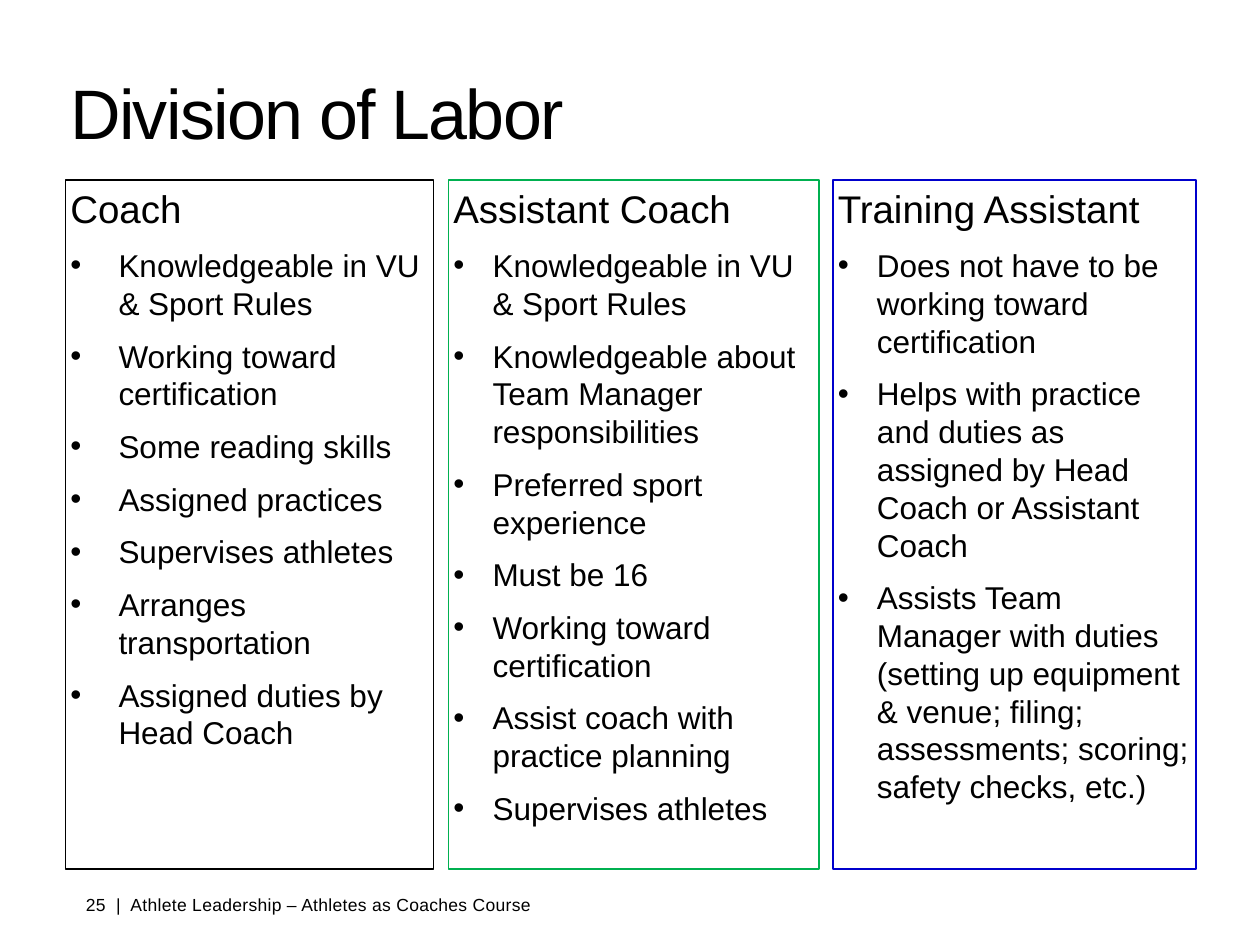
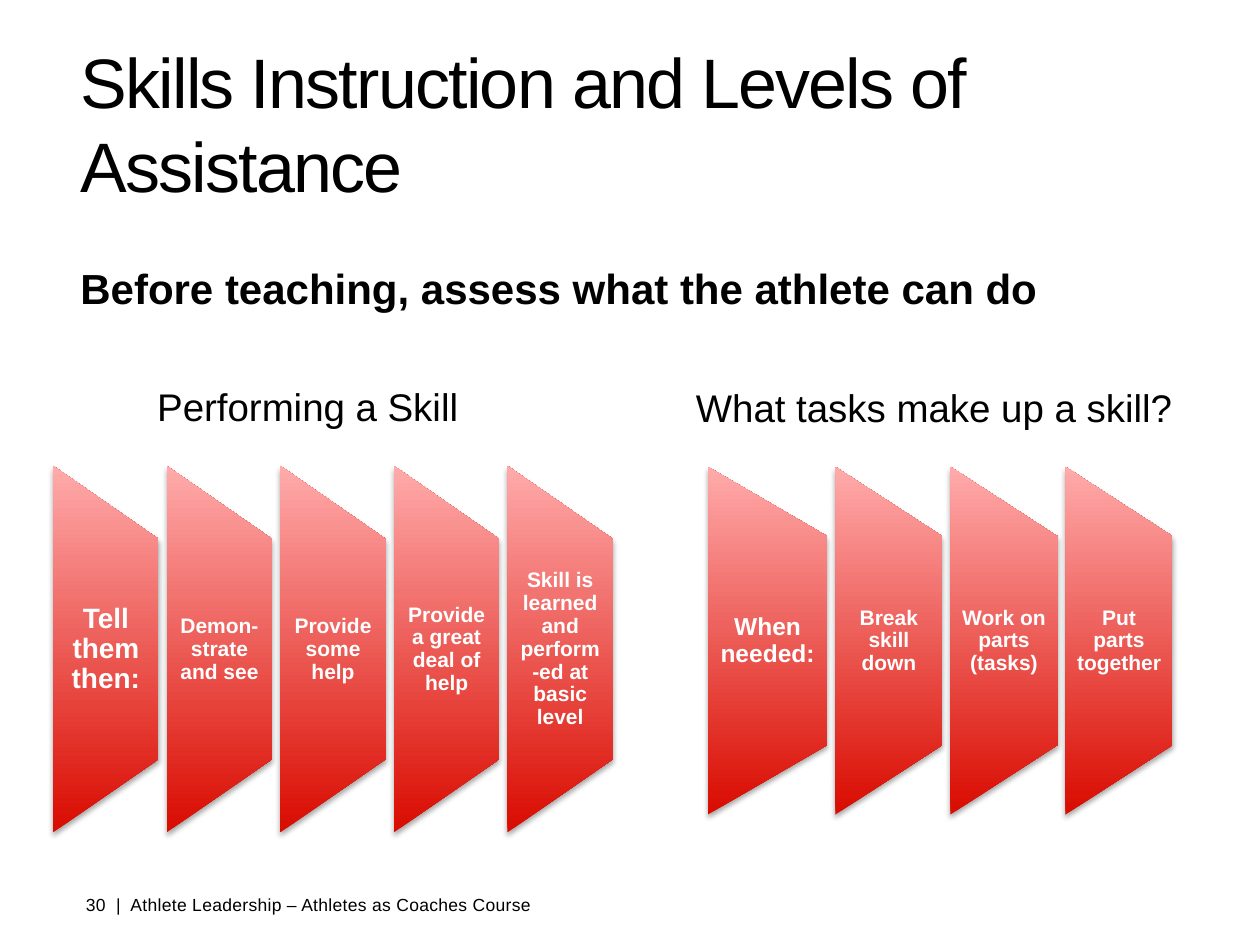
"""Build two course slides: division of labor and levels of assistance."""
from lxml import etree
from pptx import Presentation
from pptx.dml.color import RGBColor
from pptx.enum.shapes import MSO_SHAPE
from pptx.enum.text import MSO_ANCHOR, PP_ALIGN
from pptx.oxml import parse_xml
from pptx.oxml.ns import qn
from pptx.util import Cm, Pt

TOP, MIDDLE = MSO_ANCHOR.TOP, MSO_ANCHOR.MIDDLE
LEFT, CENTER = PP_ALIGN.LEFT, PP_ALIGN.CENTER
RECTANGLE, TRAPEZOID = MSO_SHAPE.RECTANGLE, MSO_SHAPE.FLOWCHART_MANUAL_OPERATION
FONT = "Arial"
COLORS = {"text": "000000", "white": "FFFFFF", "coach": "000000", "assistant": "00B050",
          "training": "0000CC", "dark_red": "D90B00", "light_red": "FFABAB"}
LINE_HEIGHT = 1.2
PANEL_GAP = 0.16
SHADOW = ('<a:outerShdw xmlns:a="http://schemas.openxmlformats.org/drawingml/2006/main" '
          'blurRad="40000" dist="23000" dir="5400000" rotWithShape="0">'
          '<a:srgbClr val="000000"><a:alpha val="35000"/></a:srgbClr></a:outerShdw>')


def style_paragraph(paragraph, size, color="text", bold=False, align=LEFT, spacing=None, tracking=0):
    paragraph.alignment = align
    paragraph.line_spacing = Pt(spacing or round(size * LINE_HEIGHT, 1))
    for run in paragraph.runs:
        run.font.name = FONT
        run.font.size = Pt(size)
        run.font.bold = bold
        run.font.color.rgb = RGBColor.from_string(COLORS[color])
        if tracking:
            run._r.get_or_add_rPr().set("spc", str(tracking))


def add_text(slide, box, text, size, anchor=TOP, inset=(0.25, 0.13), **style):
    frame = slide.shapes.add_textbox(*[Cm(length) for length in box]).text_frame
    frame.word_wrap = True
    frame.vertical_anchor = anchor
    frame.margin_left = frame.margin_right = Cm(inset[0])
    frame.margin_top = frame.margin_bottom = Cm(inset[1])
    frame.text = text
    style_paragraph(frame.paragraphs[0], size, **style)


prs = Presentation()
prs.slide_width, prs.slide_height = Cm(25.4), Cm(19.05)

slides = []
for number, title, title_left, title_spacing in [
    (25, "Division of Labor", 1.32, 36),
    (30, "Skills Instruction and Levels of Assistance", 1.52, 48),
]:
    slide = prs.slides.add_slide(prs.slide_layouts[6])
    add_text(slide, (1.55, 17.93, 10.29, 0.51),
             f"{number}  |  Athlete Leadership – Athletes as Coaches Course", 10,
             inset=(0.18, 0.1), tracking=20)
    add_text(slide, (title_left, 1.02, 21.11 - title_left, 2.9), title, 40, anchor=MIDDLE,
             inset=(0.1, 0.1), spacing=title_spacing, tracking=-100)
    slides.append(slide)
labor, skills = slides

roles = [
    ("Coach", "coach", 1.32, 7.42, 0.75, 0.97, [
        "Knowledgeable in VU & Sport Rules", "Working toward certification",
        "Some reading skills", "Assigned practices", "Supervises athletes",
        "Arranges transportation", "Assigned duties by Head Coach"]),
    ("Assistant Coach", "assistant", 9.04, 7.47, 0.75, 0.79, [
        "Knowledgeable in VU & Sport Rules",
        "Knowledgeable about Team Manager responsibilities",
        "Preferred sport experience", "Must be 16", "Working toward certification",
        "Assist coach with practice planning", "Supervises athletes"]),
    ("Training Assistant", "training", 16.79, 7.32, 1, 0.79, [
        "Does not have to be working toward certification",
        "Helps with practice and duties as assigned by Head Coach or Assistant Coach",
        "Assists Team Manager with duties (setting up equipment & venue; filing; "
        "assessments; scoring; safety checks, etc.)"]),
]
for role, border, left, width, border_width, indent, duties in roles:
    column = labor.shapes.add_shape(RECTANGLE, Cm(left), Cm(3.63), Cm(width), Cm(13.89))
    column.shadow.inherit = False
    column.fill.background()
    column.line.color.rgb = RGBColor.from_string(COLORS[border])
    column.line.width = Pt(border_width)
    frame = column.text_frame
    frame.word_wrap = True
    frame.vertical_anchor = TOP
    frame.margin_left = frame.margin_right = frame.margin_top = frame.margin_bottom = Cm(0.1)
    frame.text = role
    style_paragraph(frame.paragraphs[0], 22)
    for duty in duties:
        item = frame.add_paragraph()
        item.text = duty
        item.space_before = Pt(8.5)
        style_paragraph(item, 18)
        properties = item._p.get_or_add_pPr()
        properties.set("marL", str(Cm(indent)))
        properties.set("indent", str(-Cm(indent)))
        etree.SubElement(properties, qn("a:buFont")).set("typeface", FONT)
        etree.SubElement(properties, qn("a:buChar")).set("char", "•")

add_text(skills, (1.37, 5.16, 22.58, 1.27),
         "Before teaching, assess what the athlete can do", 24, bold=True)
add_text(skills, (2.92, 7.59, 7, 1.19), "Performing a Skill", 22)
add_text(skills, (13.65, 7.62, 10.36, 1.19), "What tasks make up a skill?", 22, align=CENTER)

sequences = [
    (14.27, 9.41, 7.01, [
        ("When needed:", 14, 2.41), ("Break skill down", 12, 2.16),
        ("Work on parts (tasks)", 12, 2.16), ("Put parts together", 12, 2.16)]),
    (1.07, 9.39, 7.39, [
        ("Tell them then:", 16, 2.13), ("Demon-strate and see", 12, 2.13),
        ("Provide some help", 12, 2.13), ("Provide a great deal of help", 12, 2.13),
        ("Skill is learned and perform-ed at basic level", 12, 2.13)]),
]
for left, top, height, steps in sequences:
    for step, size, width in steps:
        panel = skills.shapes.add_shape(
            TRAPEZOID, Cm(left + (width - height) / 2), Cm(top + (height - width) / 2),
            Cm(height), Cm(width))
        panel.rotation = 270
        panel.line.fill.background()
        panel.fill.gradient()
        panel.fill.gradient_angle = 90
        for stop, shade in zip(panel.fill.gradient_stops, ("dark_red", "light_red")):
            stop.color.rgb = RGBColor.from_string(COLORS[shade])
        panel_properties = panel._element.spPr
        panel_properties.find(qn("a:gradFill")).set("rotWithShape", "0")
        panel.shadow.inherit = False
        panel_properties.find(qn("a:effectLst")).append(parse_xml(SHADOW))
        add_text(skills, (left, top + height / 5, width, height * 0.6), step, size,
                 anchor=MIDDLE, inset=(size * 0.0175, 0), color="white", bold=True,
                 align=CENTER, spacing=round(size * LINE_HEIGHT * 0.9, 1))
        left += width + PANEL_GAP

prs.save("out.pptx")
